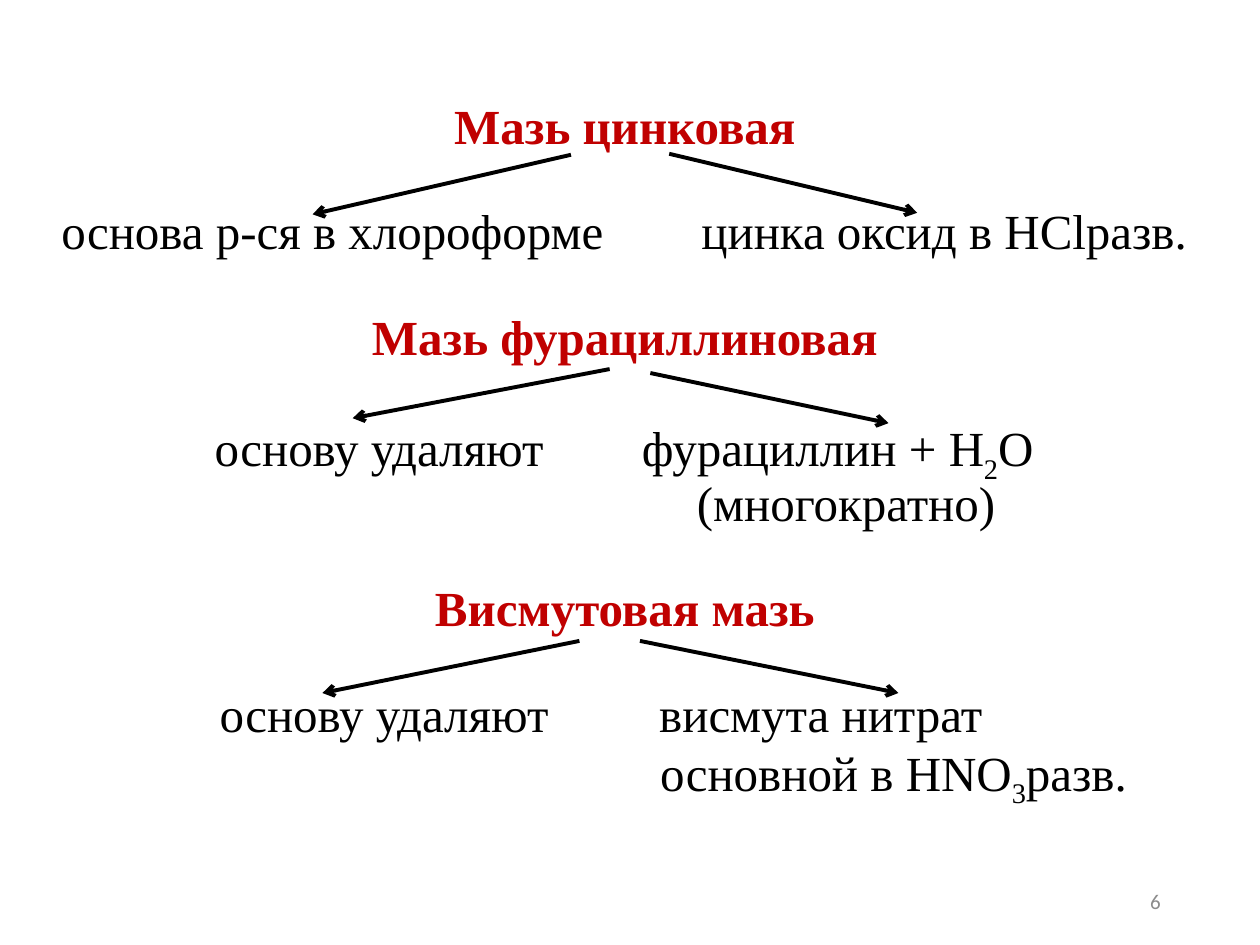
from lxml import etree
from pptx import Presentation
from pptx.dml.color import RGBColor
from pptx.enum.shapes import MSO_CONNECTOR
from pptx.enum.text import MSO_ANCHOR, PP_ALIGN
from pptx.oxml.ns import qn
from pptx.util import Cm, Pt

STRAIGHT = MSO_CONNECTOR.STRAIGHT
MIDDLE = MSO_ANCHOR.MIDDLE
LEFT, CENTER, RIGHT = PP_ALIGN.LEFT, PP_ALIGN.CENTER, PP_ALIGN.RIGHT

BLACK = RGBColor(0x00, 0x00, 0x00)
RED = RGBColor(0xC0, 0x00, 0x00)
GRAY = RGBColor(0x8C, 0x8C, 0x8C)

TOP_GAP = 1.3
BLOCK_GAP = 30.1

OINTMENTS = [
    ("Мазь цинковая", [
        [(0.5, "основа р-ся в хлороформе"), (13.4, "цинка оксид в HСlразв.")],
    ]),
    ("Мазь фурациллиновая", [
        [(3.59, "основу удаляют"), (12.2, "фурациллин + Н~2~О")],
        [(13.31, "(многократно)")],
    ]),
    ("Висмутовая мазь", [
        [(3.69, "основу удаляют"), (12.55, "висмута нитрат")],
        [(12.57, "основной в HNO~3~разв.")],
    ]),
]

ARROWS = [
    (11.51, 3.12, 6.3, 4.32),
    (12.29, 7.44, 7.11, 8.43),
    (11.68, 12.92, 6.5, 13.97),
    (13.49, 3.1, 18.49, 4.29),
    (13.11, 7.52, 17.91, 8.53),
    (12.9, 12.92, 18.11, 13.97),
]


def add_box(page, left, top, width, height):
    box = page.shapes.add_textbox(Cm(left), Cm(top), Cm(width), Cm(height))
    box.text_frame.word_wrap = True
    return box.text_frame


def write(para, text, font="Times New Roman", size=28, color=BLACK,
          bold=False, align=LEFT, spacing=0.9, before=0):
    para.alignment = align
    para.line_spacing = spacing
    para.space_before = Pt(before)
    for index, part in enumerate(text.split("~")):
        span = para.add_run()
        span.text = part
        span.font.name = font
        span.font.size = Pt(size)
        span.font.bold = bold
        span.font.color.rgb = color
        if index % 2:
            span.font._element.set("baseline", "-25000")


def set_tabs(para, stops):
    tabs = etree.SubElement(para._p.get_or_add_pPr(), qn("a:tabLst"))
    for stop in stops:
        etree.SubElement(tabs, qn("a:tab"), pos=str(Cm(stop)), algn="l")


def add_ointments(page):
    frame = add_box(page, 0.49, 1.93, 24.21, 15.8)
    para = frame.paragraphs[0]
    for number, (title, rows) in enumerate(OINTMENTS):
        if number:
            para = frame.add_paragraph()
        write(para, title, color=RED, bold=True, align=CENTER,
              before=BLOCK_GAP if number else TOP_GAP)
        for index, row in enumerate(rows):
            para = frame.add_paragraph()
            write(para, "".join("\t" + text for _, text in row),
                  before=0 if index else BLOCK_GAP)
            set_tabs(para, [stop for stop, _ in row])


def add_arrow(page, start_x, start_y, end_x, end_y):
    arrow = page.shapes.add_connector(
        STRAIGHT, Cm(start_x), Cm(start_y), Cm(end_x), Cm(end_y))
    arrow.line.color.rgb = BLACK
    arrow.line.width = Pt(2.25)
    etree.SubElement(arrow.line._get_or_add_ln(), qn("a:tailEnd"), type="arrow")
    etree.SubElement(arrow._element.spPr, qn("a:effectLst"))


def add_page_number(page):
    frame = add_box(page, 17.93, 17.65, 5.72, 1.02)
    frame.vertical_anchor = MIDDLE
    write(frame.paragraphs[0], "6", font="Calibri", size=12, color=GRAY,
          align=RIGHT, spacing=1.0)


def main():
    deck = Presentation()
    deck.slide_width, deck.slide_height = Cm(25.4), Cm(19.05)
    page = deck.slides.add_slide(deck.slide_layouts[6])
    add_ointments(page)
    for arrow in ARROWS:
        add_arrow(page, *arrow)
    add_page_number(page)
    deck.save("out.pptx")


if __name__ == "__main__":
    main()
